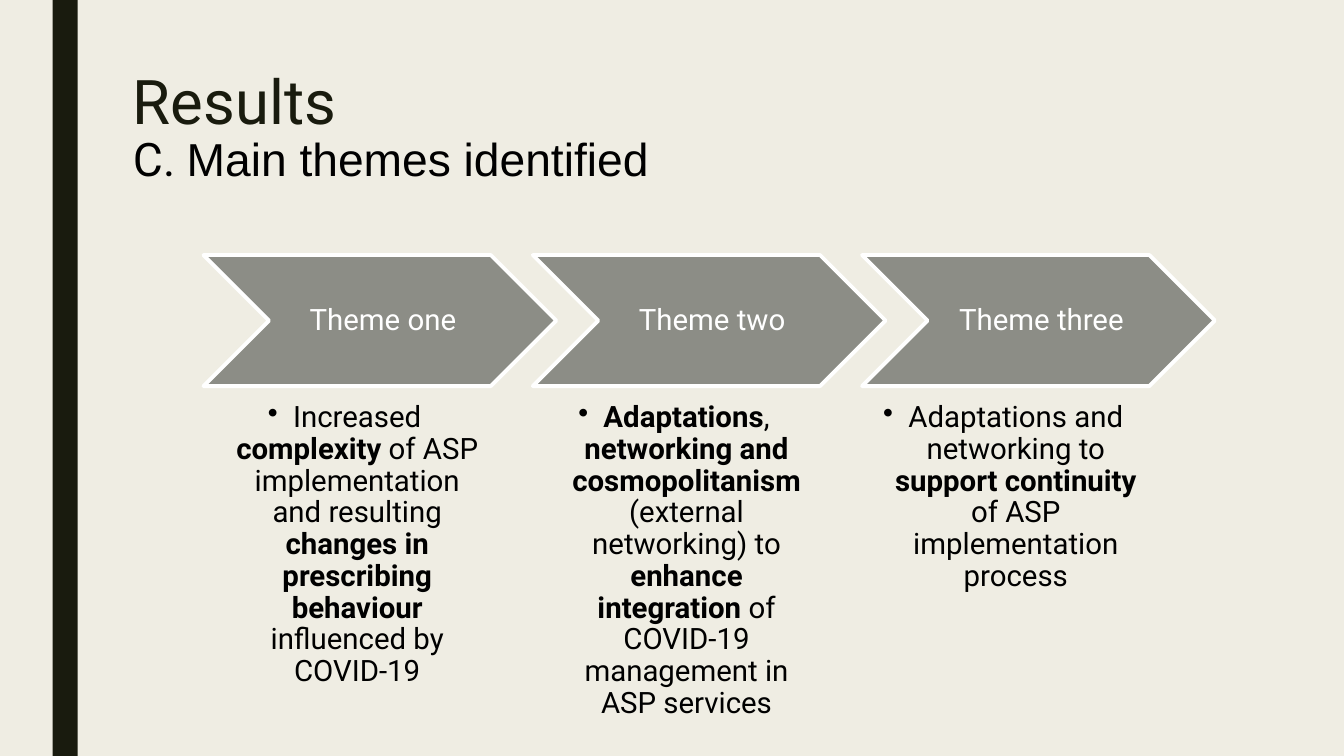
import pptx
import pptx.dml.color
import pptx.enum.shapes
import pptx.enum.text
import pptx.oxml
import pptx.oxml.ns
import pptx.util

Pt = pptx.util.Pt
SHAPE = pptx.enum.shapes.MSO_SHAPE
ALIGN = pptx.enum.text.PP_ALIGN
ANCHOR = pptx.enum.text.MSO_ANCHOR

COLOURS = {"paper": "EFEDE3", "bar": "191B0E", "theme": "8C8D86",
           "white": "FFFFFF", "black": "000000"}

# Each theme: heading, then (text, bold) pieces of its description
THEMES = [
    ("Theme one", [
        ("Increased ", False), ("complexity", True),
        (" of ASP implementation and resulting ", False),
        ("changes in prescribing behaviour ", True),
        ("influenced by COVID-19", False)]),
    ("Theme two", [
        ("Adaptations", True), (", ", False),
        ("networking and cosmopolitanism ", True),
        ("(external networking) to ", False),
        ("enhance integration ", True),
        ("of COVID-19 management in ASP services", False)]),
    ("Theme three", [
        ("Adaptations and networking to ", False),
        ("support continuity ", True),
        ("of ASP implementation process", False)]),
]


def rgb(name):
    return pptx.dml.color.RGBColor.from_string(COLOURS[name])


def apply(obj, values):
    for name, value in values.items():
        setattr(obj, name, value)


class Deck:
    font = "Roboto"
    body_size = 21

    def __init__(self, width, height):
        self.prs = pptx.Presentation()
        apply(self.prs, {"slide_width": Pt(width), "slide_height": Pt(height)})

    def add_slide(self):
        self.s = self.prs.slides.add_slide(self.prs.slide_layouts[5])
        fill = self.s.background.fill
        fill.solid()
        fill.fore_color.rgb = rgb("paper")

    def frame(self, sp, anchor, margins):
        """Set wrapping, anchor and left, top, right, bottom margins."""
        tf = sp.text_frame
        sides = ("margin_left", "margin_top", "margin_right", "margin_bottom")
        apply(tf, {"word_wrap": True, "vertical_anchor": anchor,
                   "auto_size": pptx.enum.text.MSO_AUTO_SIZE.NONE})
        apply(tf, {side: Pt(m) for side, m in zip(sides, margins)})
        return tf.paragraphs[0]

    def run(self, p, text, colour, size=body_size, **values):
        r = p.add_run()
        r.text = text
        apply(r.font, {"name": self.font, "size": Pt(size), **values})
        r.font.color.rgb = rgb(colour)

    def title(self, box, heading, number, subheading):
        sp = self.s.shapes.title
        apply(sp, dict(zip(("left", "top", "width", "height"), map(Pt, box))))
        p = self.frame(sp, ANCHOR.TOP, (7.2, 3.6, 7.2, 3.6))
        apply(p, {"alignment": ALIGN.LEFT, "line_spacing": 0.89})
        self.run(p, heading, "bar", 44)
        p.add_line_break()
        self.run(p, number, "black", 33)
        self.run(p, subheading, "black", 33, name="Arial")

    def shape(self, kind, box, colour, line=None):
        sp = self.s.shapes.add_shape(kind, *map(Pt, box))
        sp.shadow.inherit = False
        sp.fill.solid()
        sp.fill.fore_color.rgb = rgb(colour)
        if line:
            sp.line.color.rgb = rgb(line)
            sp.line.width = Pt(2.75)
        else:
            sp.line.fill.background()
        return sp

    def chevron(self, box, text):
        sp = self.shape(SHAPE.CHEVRON, box, "theme", "white")
        p = self.frame(sp, ANCHOR.MIDDLE, (6.5, 2.2, 2.2, 2.2))
        apply(p, {"alignment": ALIGN.CENTER, "line_spacing": 0.9})
        self.run(p, text, "white")

    def bullet(self, box, pieces):
        sp = self.s.shapes.add_textbox(*map(Pt, box))
        p = self.frame(sp, ANCHOR.TOP, (0, 0, 0, 0))
        apply(p, {"alignment": ALIGN.CENTER, "line_spacing": 0.9, "level": 1})
        pPr = p._p.get_or_add_pPr()
        pPr.set("marL", str(Pt(18)))
        pPr.set("indent", str(Pt(-18)))
        pPr.append(pptx.oxml.parse_xml(
            f'<a:buChar {pptx.oxml.ns.nsdecls("a")} char="•"/>'))
        for text, bold in pieces:
            self.run(p, text, "black", bold=bold)


def main():
    deck = Deck(960, 540)
    deck.add_slide()
    deck.shape(SHAPE.RECTANGLE, (37.5, 0, 18, 540), "bar")
    deck.title((87.8, 47.5, 838, 116.6), "Results", "C. ", "Main themes identified")
    for i, (heading, pieces) in enumerate(THEMES):
        left = 145.4 + 235.2 * i
        deck.chevron((left, 182.2, 252, 93.6), heading)
        deck.bullet((left, 287.3, 201.6, 193), pieces)
    deck.prs.save("out.pptx")


if __name__ == "__main__":
    main()
